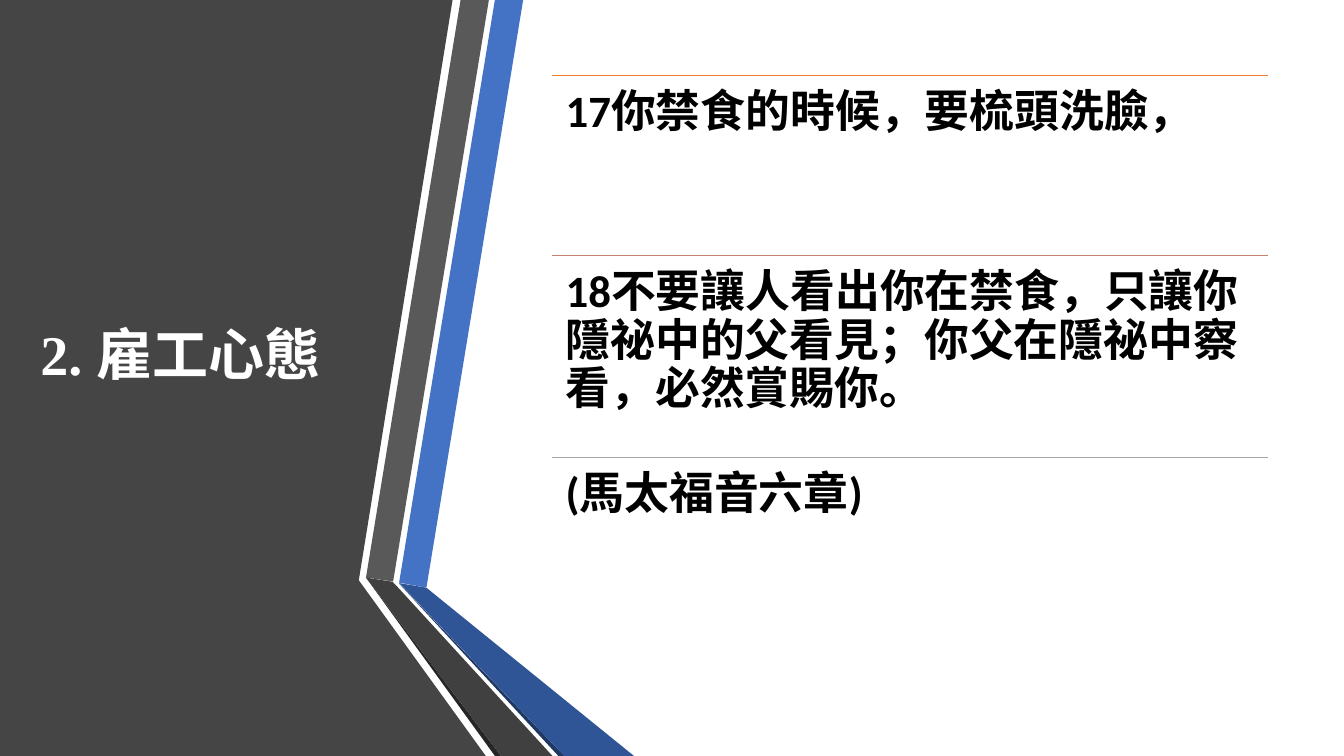
from dataclasses import dataclass

from lxml.etree import SubElement
from pptx import Presentation
from pptx.dml.color import RGBColor
from pptx.enum.text import MSO_ANCHOR, MSO_AUTO_SIZE, PP_ALIGN
from pptx.enum.shapes import MSO_CONNECTOR
from pptx.oxml.ns import qn
from pptx.slide import Slide
from pptx.util import Pt

WHITE = RGBColor(0xFF, 0xFF, 0xFF)
BLACK = RGBColor(0x00, 0x00, 0x00)
CHARCOAL = RGBColor(0x45, 0x45, 0x45)
GREY = RGBColor(0x59, 0x59, 0x59)
DARK_GREY = RGBColor(0x40, 0x40, 0x40)
GREY_EDGE = RGBColor(0x26, 0x26, 0x26)
BLUE = RGBColor(0x44, 0x72, 0xC4)
DARK_BLUE = RGBColor(0x2F, 0x55, 0x97)
BLUE_EDGE = RGBColor(0x20, 0x38, 0x64)
ORANGE = RGBColor(0xED, 0x7D, 0x31)
ROSE = RGBColor(0xC4, 0x81, 0x70)
SILVER = RGBColor(0xA5, 0xA5, 0xA5)

SLIDE_WIDTH, SLIDE_HEIGHT = 960, 540
VERSE_LEFT, VERSE_WIDTH = 394.5, 511.2
VERSE_INSET = 9.6


@dataclass(frozen=True)
class Panel:
    color: RGBColor
    points: tuple[tuple[float, float], ...]


@dataclass(frozen=True)
class Verse:
    text: str
    top: float
    height: float
    rule_color: RGBColor


# Folded ribbon, from back to front
PANELS = (
    Panel(CHARCOAL, ((0, 0), (323.3, 0), (256.3, 414.5), (347, 540), (0, 540))),
    Panel(BLUE, ((285.1, 416.2), (304.6, 419.8), (373.7, 0), (353.5, 0))),
    Panel(GREY, ((349.2, 0), (329, 0), (261.4, 412.6), (280.8, 415.4))),
    Panel(GREY_EDGE, ((261.4, 412.6), (353.5, 540), (357.8, 540))),
    Panel(BLUE_EDGE, ((285.1, 416.9), (398.9, 540), (403.2, 540))),
    Panel(DARK_BLUE, ((285.1, 416.5), (403.2, 540), (452.9, 540), (304.6, 419.8))),
    Panel(DARK_GREY, ((394.6, 540), (284.4, 419.8), (280.4, 415.6),
                      (261.4, 412.6), (357.8, 540))),
)

VERSES = (
    Verse("17你禁食的時候，要梳頭洗臉，", 54, 128.5, ORANGE),
    Verse("18不要讓人看出你在禁食，只讓你隱祕中的父看見；你父在隱祕中察看，必然賞賜你。",
          182.5, 144.5, ROSE),
    Verse("(馬太福音六章)", 327, 128.5, SILVER),
)


def add_panel(slide: Slide, panel: Panel) -> None:
    start, *others = [(Pt(x), Pt(y)) for x, y in panel.points]
    builder = slide.shapes.build_freeform(*start)
    builder.add_line_segments(others, close=True)
    shape = builder.convert_to_shape()
    shape.shadow.inherit = False
    shape.fill.solid()
    shape.fill.fore_color.rgb = panel.color
    shape.line.fill.background()


def fill_title(slide: Slide) -> None:
    title = slide.shapes.title
    title.left, title.top, title.width, title.height = Pt(21.6), Pt(54), Pt(241.2), Pt(402)
    frame = title.text_frame
    frame.word_wrap = True
    frame.auto_size = MSO_AUTO_SIZE.NONE
    frame.vertical_anchor = MSO_ANCHOR.MIDDLE
    paragraph = frame.paragraphs[0]
    paragraph.alignment = PP_ALIGN.LEFT
    paragraph.line_spacing = 0.9
    paragraph.font.size = Pt(40)
    paragraph.font.bold = True
    paragraph.font.color.rgb = WHITE
    for text, font_name in (("2. ", "Times New Roman"), ("雇工心態", "Noto Sans CJK SC")):
        run = paragraph.add_run()
        run.text = text
        run.font.name = font_name


def add_verse(slide: Slide, verse: Verse) -> None:
    # Rule above the verse
    rule = slide.shapes.add_connector(
        MSO_CONNECTOR.STRAIGHT, Pt(VERSE_LEFT), Pt(verse.top),
        Pt(VERSE_LEFT + VERSE_WIDTH), Pt(verse.top))
    rule.line.color.rgb = verse.rule_color
    rule.line.width = Pt(1)
    SubElement(rule._element.spPr, qn("a:effectLst"))

    # Verse text
    box = slide.shapes.add_textbox(
        Pt(VERSE_LEFT), Pt(verse.top), Pt(VERSE_WIDTH), Pt(verse.height))
    frame = box.text_frame
    frame.word_wrap = True
    frame.margin_left = frame.margin_right = Pt(VERSE_INSET)
    frame.margin_top = frame.margin_bottom = Pt(VERSE_INSET)
    paragraph = frame.paragraphs[0]
    paragraph.text = verse.text
    paragraph.line_spacing = 0.9
    paragraph.font.name = "Calibri"
    paragraph.font.size = Pt(32)
    paragraph.font.bold = True
    paragraph.font.color.rgb = BLACK


def main() -> None:
    presentation = Presentation()
    presentation.slide_width = Pt(SLIDE_WIDTH)
    presentation.slide_height = Pt(SLIDE_HEIGHT)
    slide = presentation.slides.add_slide(presentation.slide_layouts.get_by_name("Title Only"))
    slide.background.fill.solid()
    slide.background.fill.fore_color.rgb = WHITE

    for panel in PANELS:
        add_panel(slide, panel)
    fill_title(slide)
    # Keep the title in front of the ribbon
    slide.shapes._spTree.append(slide.shapes.title._element)
    for verse in VERSES:
        add_verse(slide, verse)

    presentation.save("out.pptx")


if __name__ == "__main__":
    main()
